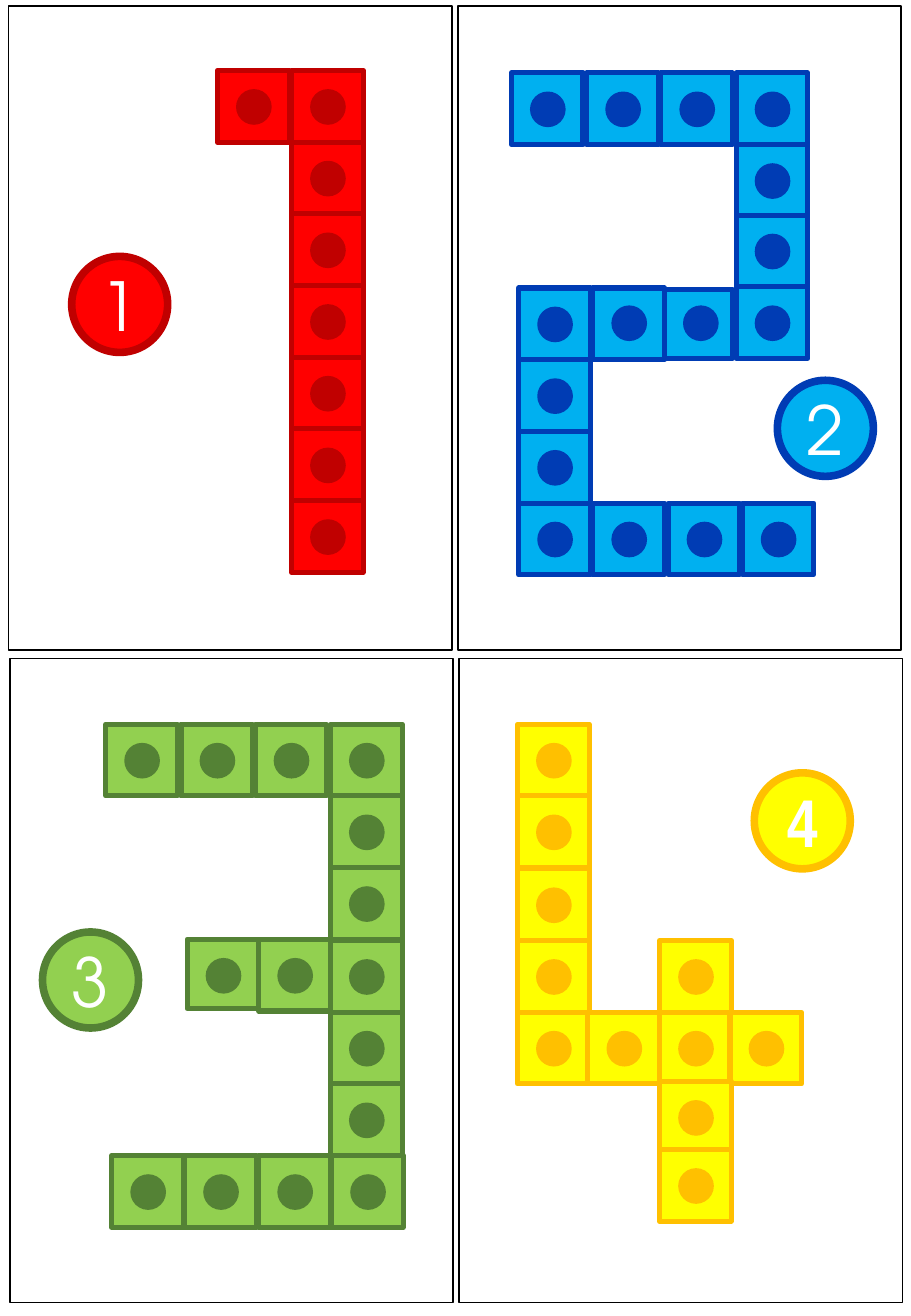
from collections.abc import Iterator
from dataclasses import dataclass

from pptx import Presentation
from pptx.dml.color import RGBColor
from pptx.enum.shapes import MSO_SHAPE
from pptx.enum.text import MSO_ANCHOR, PP_ALIGN
from pptx.shapes.autoshape import Shape
from pptx.slide import Slide
from pptx.util import Emu, Pt

PX = 9144  # EMU in one px, 100 px to the inch
BLOCK, DOT, BADGE = 59, 28, 79
CARD_W, CARD_H = 365, 530


@dataclass(frozen=True)
class Theme:
    white: str = "FFFFFF"
    black: str = "000000"
    red: tuple[str, str] = ("FF0000", "C00000")
    blue: tuple[str, str] = ("00B0F0", "003CB4")
    green: tuple[str, str] = ("92D050", "548235")
    yellow: tuple[str, str] = ("FFFF00", "FFC000")
    thin: float = 1
    edge: float = 3
    ring: float = 4.5
    size: int = 40
    font: str = "TeX Gyre Adventor"
    narrow: str = "Arial Narrow"


THEME = Theme()


@dataclass(frozen=True)
class Run:
    """Equal blocks spread evenly from the first place to the last."""
    first: tuple[int, int]
    last: tuple[int, int] | None = None
    count: int = 1
    wide: int = BLOCK
    high: int = BLOCK
    drop: int = 16

    def places(self) -> Iterator[tuple[int, int]]:
        (x, y), (x2, y2) = self.first, self.last or self.first
        gaps = max(self.count - 1, 1)
        for i in range(self.count):
            yield x + round((x2 - x) * i / gaps), y + round((y2 - y) * i / gaps)


@dataclass(frozen=True)
class Card:
    digit: str
    corner: tuple[int, int]
    badge: tuple[int, int]
    tones: tuple[str, str]
    runs: tuple[Run, ...]
    font: str = THEME.font
    bold: bool = False


CARDS = (
    Card("1", (7, 5), (59, 211), THEME.red, (
        Run((179, 58)),
        Run((240, 58), (240, 412), 7),
    )),
    Card("2", (377, 5), (640, 313), THEME.blue, (
        Run((421, 60), (544, 60), 3),
        Run((547, 238), wide=56, high=57, drop=14),
        Run((606, 60), (606, 236), 4),
        Run((488, 237), drop=15),
        Run((427, 237), (427, 355), 3),
        Run((427, 414), (611, 414), 4),
    )),
    Card("3", (8, 542), (35, 767), THEME.green, (
        Run((87, 596), (210, 596), 3),
        Run((154, 773), high=57),
        Run((213, 773)),
        Run((272, 596), (272, 892), 6),
        Run((92, 951), (273, 951), 4),
    )),
    Card("4", (378, 542), (621, 636), THEME.yellow, (
        Run((426, 596), (426, 774), 4),
        Run((426, 833), (601, 833), 4),
        Run((543, 774)),
        Run((543, 890), (543, 946), 2),
    ), font=THEME.narrow, bold=True),
)


def put(slide: Slide, kind: MSO_SHAPE, at: tuple[int, int], size: tuple[int, int],
        fill: str, line: str, width: float) -> Shape:
    shape = slide.shapes.add_shape(kind, *(Emu(n * PX) for n in (*at, *size)))
    shape.shadow.inherit = False
    shape.fill.solid()
    shape.fill.fore_color.rgb = RGBColor.from_string(fill)
    shape.line.color.rgb = RGBColor.from_string(line)
    shape.line.width = Pt(width)
    return shape


def draw_run(slide: Slide, run: Run, tones: tuple[str, str]) -> None:
    fill, dark = tones
    for x, y in run.places():
        put(slide, MSO_SHAPE.RECTANGLE, (x, y), (run.wide, run.high),
            fill, dark, THEME.edge)
        put(slide, MSO_SHAPE.OVAL, (x + 16, y + run.drop), (DOT, DOT),
            dark, dark, THEME.thin)


def draw_badge(slide: Slide, card: Card) -> None:
    shape = put(slide, MSO_SHAPE.OVAL, card.badge, (BADGE, BADGE),
                *card.tones, THEME.ring)
    frame = shape.text_frame
    form = {"word_wrap": False, "vertical_anchor": MSO_ANCHOR.MIDDLE,
            "margin_left": 0, "margin_right": 0, "margin_top": 0, "margin_bottom": 0}
    for name, value in form.items():
        setattr(frame, name, value)
    line = frame.paragraphs[0]
    line.alignment = PP_ALIGN.CENTER
    text = line.add_run()
    text.text = card.digit
    form = {"name": card.font, "size": Pt(THEME.size), "bold": card.bold}
    for name, value in form.items():
        setattr(text.font, name, value)
    text.font.color.rgb = RGBColor.from_string(THEME.white)


def draw_card(slide: Slide, card: Card) -> None:
    put(slide, MSO_SHAPE.RECTANGLE, card.corner, (CARD_W, CARD_H),
        THEME.white, THEME.black, THEME.thin)
    for run in card.runs:
        draw_run(slide, run, card.tones)
    draw_badge(slide, card)


def main() -> None:
    # Page
    deck = Presentation()
    deck.slide_width, deck.slide_height = Emu(750 * PX), Emu(1083 * PX)
    slide = deck.slides.add_slide(deck.slide_layouts[6])
    # Number cards
    for card in CARDS:
        draw_card(slide, card)
    deck.save("out.pptx")


if __name__ == "__main__":
    main()
